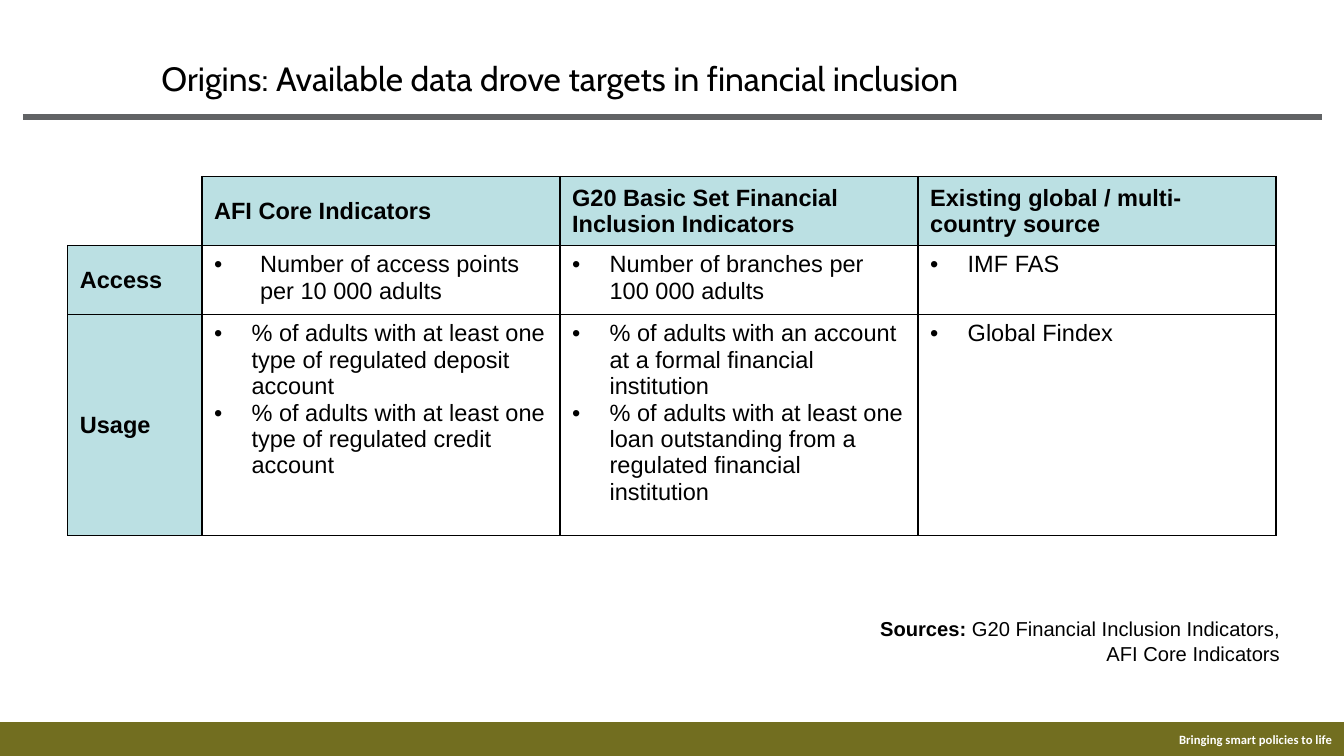
from pptx import Presentation
from pptx.dml.color import RGBColor as RGB
from pptx.enum.shapes import MSO_CONNECTOR as LINE, MSO_SHAPE as SHAPE
from pptx.enum.text import MSO_ANCHOR as ANCHOR, PP_ALIGN as ALIGN
from pptx.oxml.ns import qn
from pptx.util import Inches, Pt
from lxml.etree import SubElement as sub

BLACK = RGB(0x00, 0x00, 0x00)
WHITE = RGB(0xFF, 0xFF, 0xFF)
GRAY = RGB(0x61, 0x63, 0x65)
OLIVE = RGB(0x72, 0x6E, 0x20)
AQUA = RGB(0xBB, 0xE0, 0xE3)

TITLE = "Origins: Available data drove targets in financial inclusion"
MOTTO = "Bringing smart policies to life"
SOURCES = (
    ("Sources: ", True),
    ("G20 Financial Inclusion Indicators, AFI Core Indicators", False),
)
HEADS = [
    "",
    "AFI Core Indicators",
    "G20 Basic Set Financial Inclusion Indicators",
    "Existing global / multi-country source",
]
ROWS = [
    ("Access",
     ["Number of access points per 10 000 adults"],
     ["Number of branches per 100 000 adults"],
     ["IMF FAS"]),
    ("Usage",
     ["% of adults with at least one type of regulated deposit account",
      "% of adults with at least one type of regulated credit account"],
     ["% of adults with an account at a formal financial institution",
      "% of adults with at least one loan outstanding from a regulated "
      "financial institution"],
     ["Global Findex"]),
]
WIDTHS = [1.11, 2.96, 2.96, 2.96]
HEIGHTS = [0.57, 0.57, 1.83]
INDENT = 0.31
WIDE = 0.38


def style(font, name, size, color=BLACK, bold=False):
    font.name = name
    font.size = Pt(size)
    font.bold = bold
    font.color.rgb = color


def border(cell, sides):
    props = cell._tc.get_or_add_tcPr()
    for side in "LRTB":
        edge = sub(props, qn("a:ln" + side), w=str(Pt(1)))
        if side in sides:
            fill = sub(edge, qn("a:solidFill"))
            sub(fill, qn("a:srgbClr"), val=str(BLACK))
        else:
            sub(edge, qn("a:noFill"))


def bullet(para, indent):
    props = para._p.get_or_add_pPr()
    props.set("marL", str(Inches(indent)))
    props.set("indent", str(-Inches(indent)))
    sub(props, qn("a:buFont"), typeface="Arial")
    sub(props, qn("a:buChar"), char="•")


def fill_cell(cell, row, col):
    corner = row == col == 0
    label = row == 0 or col == 0
    border(cell, "RB" if corner else "LRTB")
    cell.fill.solid()
    cell.fill.fore_color.rgb = AQUA if label and not corner else WHITE
    cell.vertical_anchor = ANCHOR.MIDDLE if label else ANCHOR.TOP
    text = GRID[row][col]
    cell.text = text if label else "\n".join(text)
    for para in cell.text_frame.paragraphs:
        if not label:
            bullet(para, WIDE if row == col == 1 else INDENT)
        style(para.font, "Arial", 14, bold=label)


GRID = [HEADS, *ROWS]

deck = Presentation()
deck.slide_width = Inches(11.11)
deck.slide_height = Inches(6.25)
slide = deck.slides.add_slide(deck.slide_layouts[5])
shapes = slide.shapes

rule = shapes.add_connector(
    LINE.STRAIGHT, Inches(0.19), Inches(0.97), Inches(10.93), Inches(0.97))
rule.line.color.rgb = GRAY
rule.line.width = Pt(3.5)
sub(rule._element.spPr, qn("a:effectLst"))

band = shapes.add_shape(
    SHAPE.RECTANGLE, Inches(-0.02), Inches(5.97), Inches(11.13), Inches(0.28))
band.shadow.inherit = False
band.fill.solid()
band.fill.fore_color.rgb = OLIVE
band.line.fill.background()
frame = band.text_frame
frame.word_wrap = False
frame.vertical_anchor = ANCHOR.MIDDLE
frame.text = MOTTO
para = frame.paragraphs[0]
para.alignment = ALIGN.RIGHT
style(para.font, "Calibri", 7.5, WHITE, True)

title = shapes.title
title.left, title.top = Inches(0.28), Inches(0.43)
title.width, title.height = Inches(8.7), Inches(0.72)
frame = title.text_frame
frame.text = TITLE
frame.vertical_anchor = ANCHOR.TOP
para = frame.paragraphs[0]
para.alignment = ALIGN.CENTER
style(para.font, "Cabin", 20)

table = shapes.add_table(
    len(GRID), len(HEADS), Inches(0.56), Inches(1.46),
    Inches(sum(WIDTHS)), Inches(sum(HEIGHTS))).table
table.first_row = False
table.horz_banding = False
for col, width in enumerate(WIDTHS):
    table.columns[col].width = Inches(width)
for row, height in enumerate(HEIGHTS):
    table.rows[row].height = Inches(height)
    for col in range(len(HEADS)):
        fill_cell(table.cell(row, col), row, col)

note = shapes.add_textbox(
    Inches(6.94), Inches(5.05), Inches(3.74), Inches(0.5))
note.text_frame.word_wrap = True
para = note.text_frame.paragraphs[0]
para.alignment = ALIGN.RIGHT
for text, bold in SOURCES:
    run = para.add_run()
    run.text = text
    style(run.font, "Arial", 12, bold=bold)

deck.save("out.pptx")
